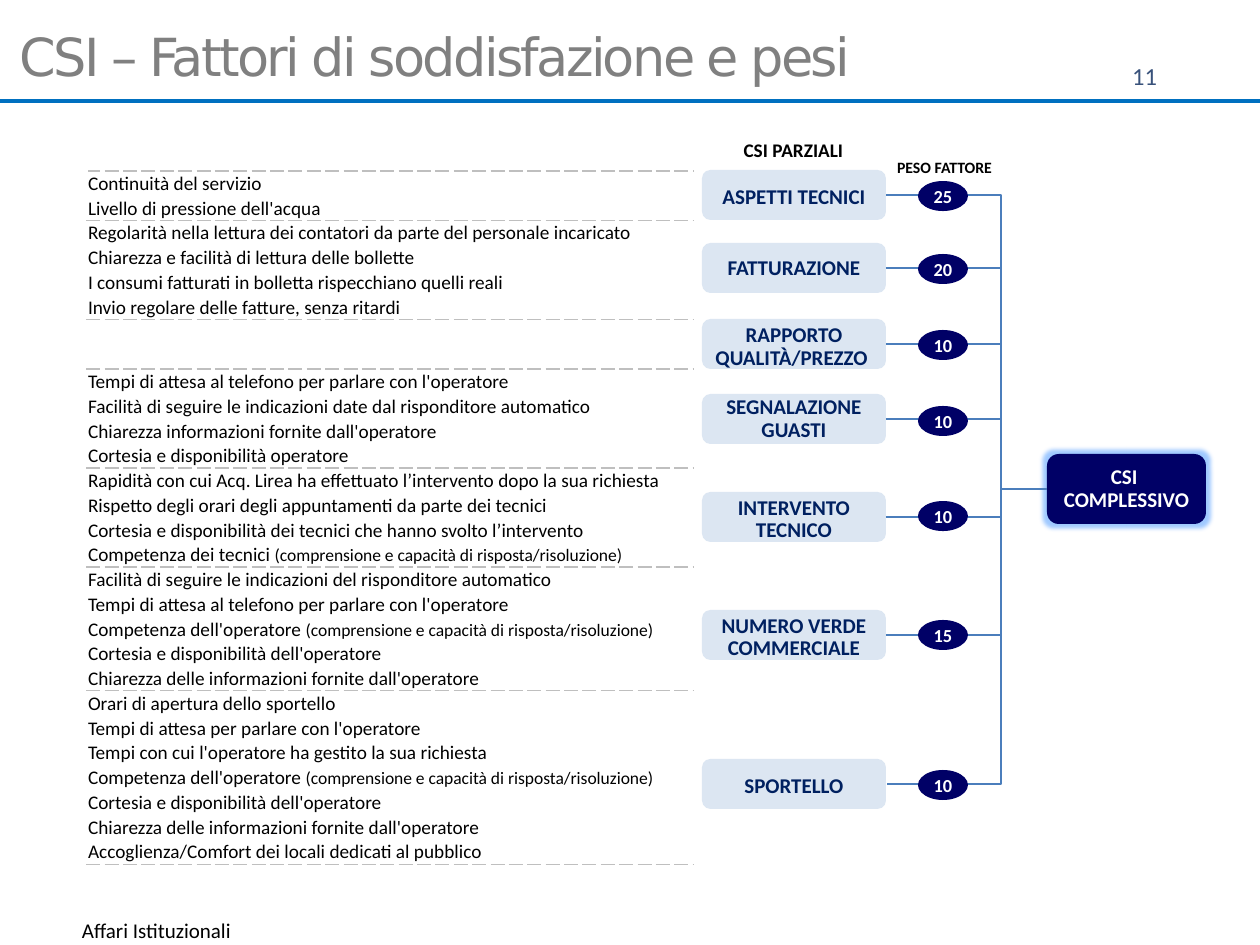
"""Build the slide of satisfaction factors, their weights and the overall CSI."""
from dataclasses import dataclass
from typing import Any, NamedTuple

from lxml.etree import SubElement
from pptx import Presentation
from pptx.dml.color import RGBColor
from pptx.enum.dml import MSO_LINE
from pptx.enum.shapes import MSO_CONNECTOR, MSO_SHAPE
from pptx.enum.text import MSO_ANCHOR, PP_ALIGN
from pptx.oxml.ns import qn
from pptx.util import Emu, Pt


@dataclass(frozen=True)
class Theme:
    font: str = "Calibri"
    title_font: str = "DejaVu Sans"
    black: str = "000000"
    white: str = "FFFFFF"
    title: str = "808080"
    number: str = "39527B"
    rule: str = "0070C0"
    dash: str = "BFBFBF"
    navy: str = "000066"
    pale: str = "DCE6F2"
    factor: str = "002060"
    link: str = "4B7EBC"
    glow: str = "60A5FF"
    title_pt: float = 30
    number_pt: float = 14
    box_pt: float = 12
    row_pt: float = 11
    weight_pt: float = 10.5
    note_pt: float = 10
    label_pt: float = 9
    leading_pt: float = 13


class Box(NamedTuple):
    x: int
    y: int
    w: int
    h: int


class Style(NamedTuple):
    size: float
    color: str
    bold: bool = False
    font: str = "Calibri"


class Factor(NamedTuple):
    name: str
    weight: str
    top: int
    oval_top: int
    inset: int = 5


T = Theme()
MARGINS = (13, 6, 13, 6)
BUS_X = 1002
NOTE = "(comprensione e capacità di risposta/risoluzione)"
FACTORS = [
    Factor("ASPETTI TECNICI", "25", 170, 181),
    Factor("FATTURAZIONE", "20", 243, 254, 0),
    Factor("RAPPORTO QUALITÀ/PREZZO ", "10", 319, 330),
    Factor("SEGNALAZIONE GUASTI", "10", 394, 406, 0),
    Factor("INTERVENTO TECNICO", "10", 492, 501),
    Factor("NUMERO VERDE COMMERCIALE", "15", 610, 620),
    Factor("SPORTELLO", "10", 759, 770),
]
GROUPS = [
    ["Continuità del servizio", "Livello di pressione dell'acqua"],
    ["Regolarità nella lettura dei contatori da parte del personale incaricato",
     "Chiarezza e facilità di lettura delle bollette",
     "I consumi fatturati in bolletta rispecchiano quelli reali",
     "Invio regolare delle fatture, senza ritardi"],
    ["", ""],
    ["Tempi di attesa al telefono per parlare con l'operatore",
     "Facilità di seguire le indicazioni date dal risponditore automatico",
     "Chiarezza informazioni fornite dall'operatore",
     "Cortesia e disponibilità operatore"],
    ["Rapidità con cui Acq. Lirea ha effettuato l’intervento dopo la sua richiesta",
     "Rispetto degli orari degli appuntamenti da parte dei tecnici",
     "Cortesia e disponibilità dei tecnici che hanno svolto l’intervento",
     f"Competenza dei tecnici {NOTE}"],
    ["Facilità di seguire le indicazioni del risponditore automatico",
     "Tempi di attesa al telefono per parlare con l'operatore",
     f"Competenza dell'operatore {NOTE}",
     "Cortesia e disponibilità dell'operatore",
     "Chiarezza delle informazioni fornite dall'operatore"],
    ["Orari di apertura dello sportello",
     "Tempi di attesa per parlare con l'operatore",
     "Tempi con cui l'operatore ha gestito la sua richiesta",
     f"Competenza dell'operatore {NOTE}",
     "Cortesia e disponibilità dell'operatore",
     "Chiarezza delle informazioni fornite dall'operatore",
     "Accoglienza/Comfort dei locali dedicati al pubblico"],
]


def px(n: int) -> Emu:
    """Turn pixels into EMU."""
    return Emu(round(n * 914400 / 126))


def place(box: Box) -> list[Emu]:
    """Give the four EMU lengths of a box."""
    return [px(n) for n in box]


def add_run(p: Any, text: str, style: Style) -> Any:
    """Add one formatted run."""
    r = p.add_run()
    r.text = text
    r.font.size, r.font.bold, r.font.name = Pt(style.size), style.bold, style.font
    r.font.color.rgb = RGBColor.from_string(style.color)
    return r


def set_frame(tf: Any, insets: tuple[int, int, int, int], anchor: MSO_ANCHOR) -> None:
    """Set wrapping, margins and anchor of a text frame."""
    tf.word_wrap = True
    tf.vertical_anchor = anchor
    tf.margin_left, tf.margin_top, tf.margin_right, tf.margin_bottom = map(px, insets)


def add_label(s: Any, box: Box, text: str, style: Style, align: PP_ALIGN,
              insets: tuple[int, int, int, int] = MARGINS,
              anchor: MSO_ANCHOR = MSO_ANCHOR.TOP) -> None:
    """Add a one-line text box."""
    tf = s.shapes.add_textbox(*place(box)).text_frame
    set_frame(tf, insets, anchor)
    tf.paragraphs[0].alignment = align
    add_run(tf.paragraphs[0], text, style)


def add_node(s: Any, kind: MSO_SHAPE, box: Box, fill: str, lines: list[str],
             style: Style, insets: tuple[int, int, int, int]) -> Any:
    """Add a filled shape with centred text."""
    sp = s.shapes.add_shape(kind, *place(box))
    sp.shadow.inherit = False
    sp.fill.solid()
    sp.fill.fore_color.rgb = RGBColor.from_string(fill)
    sp.line.fill.background()
    tf = sp.text_frame
    set_frame(tf, insets, MSO_ANCHOR.MIDDLE)
    for i, line in enumerate(lines):
        p = tf.add_paragraph() if i else tf.paragraphs[0]
        p.alignment, p.line_spacing = PP_ALIGN.CENTER, Pt(T.leading_pt)
        add_run(p, line, style)
    return sp


def add_link(s: Any, start: tuple[int, int], end: tuple[int, int], color: str = T.link,
             width: float = 0.75, kind: MSO_CONNECTOR = MSO_CONNECTOR.STRAIGHT) -> Any:
    """Add a connector without shadow."""
    c = s.shapes.add_connector(kind, *(px(n) for n in start + end))
    c.line.color.rgb = RGBColor.from_string(color)
    c.line.width = Pt(width)
    SubElement(c._element.spPr, qn("a:effectLst"))
    return c


def add_dash(cell: Any, side: str) -> None:
    """Draw a dashed border on one side of a cell."""
    ln = SubElement(cell._tc.get_or_add_tcPr(), qn(f"a:{side}"), w=str(Pt(0.75)))
    SubElement(SubElement(ln, qn("a:solidFill")), qn("a:srgbClr"), val=T.dash)
    SubElement(ln, qn("a:prstDash"), val="dash")


def fill_cell(cell: Any, text: str) -> None:
    """Write a row's wording, with its note in smaller type."""
    cell.margin_left = cell.margin_top = cell.margin_right = px(1)
    cell.margin_bottom = 0
    cell.vertical_anchor = MSO_ANCHOR.MIDDLE
    cell.fill.background()
    p = cell.text_frame.paragraphs[0]
    if not text:
        p._p.get_or_add_endParaRPr().set("sz", str(round(T.row_pt * 100)))
        return
    main, note, _ = text.partition(NOTE)
    add_run(p, main, Style(T.row_pt, T.black))
    if note:
        add_run(p, note, Style(T.note_pt, T.black))


def add_items(s: Any, box: Box) -> None:
    """Add the table of items, ruled off by group."""
    count = sum(map(len, GROUPS))
    table = s.shapes.add_table(count, 1, *place(box)).table
    table.first_row = table.horz_banding = False
    rows = iter(table.rows)
    for group in GROUPS:
        for i, text in enumerate(group):
            row = next(rows)
            row.height = px(box.h) // count
            cell = row.cells[0]
            if i == 0:
                add_dash(cell, "lnT")
            if i == len(group) - 1:
                add_dash(cell, "lnB")
            fill_cell(cell, text)


def add_factor(s: Any, factor: Factor, joined: bool) -> None:
    """Add a factor box, its weight and, if joined, its line to the bus."""
    box = Box(702, factor.top, 184, 50)
    sp = add_node(s, MSO_SHAPE.ROUNDED_RECTANGLE, box, T.pale, [factor.name],
                  Style(T.box_pt, T.factor, True), (3, factor.inset, 3, 0))
    if joined:
        y = factor.top + 25
        add_link(s, (886, y), (BUS_X, y)).begin_connect(sp, 3)
    add_node(s, MSO_SHAPE.OVAL, Box(918, factor.oval_top, 50, 30), T.navy,
             [factor.weight], Style(T.weight_pt, T.white, True), (0, 0, 0, 0))


def add_total(s: Any) -> None:
    """Add the glowing overall box and its line from the bus."""
    sp = add_node(s, MSO_SHAPE.ROUNDED_RECTANGLE, Box(1047, 454, 159, 70), T.navy,
                  ["CSI ", "COMPLESSIVO"], Style(T.box_pt, T.white, True), MARGINS)
    effects = sp._element.spPr.find(qn("a:effectLst"))
    glow = SubElement(effects, qn("a:glow"), rad=str(Pt(5)))
    color = SubElement(glow, qn("a:srgbClr"), val=T.glow)
    SubElement(color, qn("a:alpha"), val="60000")
    add_link(s, (BUS_X, 489), (1047, 489)).end_connect(sp, 1)


def main() -> None:
    """Build and save the slide."""
    prs = Presentation()
    prs.slide_width, prs.slide_height = px(1260), px(945)
    s = prs.slides.add_slide(prs.slide_layouts[5])
    title = s.shapes.title
    title.left, title.top, title.width, title.height = place(Box(0, 16, 1225, 80))
    set_frame(title.text_frame, (20, 6, 13, 6), MSO_ANCHOR.MIDDLE)
    p = title.text_frame.paragraphs[0]
    p.alignment = PP_ALIGN.LEFT
    r = add_run(p, "CSI – Fattori di soddisfazione e pesi",
                Style(T.title_pt, T.title, font=T.title_font))
    r.font._element.set("spc", "-150")
    add_link(s, (0, 101), (1260, 101), T.rule, 2)
    add_label(s, Box(876, 55, 294, 50), "11", Style(T.number_pt, T.number), PP_ALIGN.RIGHT)
    add_label(s, Box(69, 911, 397, 38), "Affari Istituzionali",
              Style(T.box_pt, T.black), PP_ALIGN.LEFT, anchor=MSO_ANCHOR.MIDDLE)
    add_items(s, Box(87, 171, 605, 694))
    bus = add_link(s, (886, 195), (887, 784), kind=MSO_CONNECTOR.ELBOW)
    guides = bus._element.spPr.find(qn("a:prstGeom")).get_or_add_avLst()
    SubElement(guides, qn("a:gd"), name="adj1", fmla=f"val {(BUS_X - 886) * 100000}")
    for factor in FACTORS:
        add_factor(s, factor, factor not in (FACTORS[0], FACTORS[-1]))
    add_total(s)
    add_label(s, Box(736, 132, 115, 37), "CSI PARZIALI",
              Style(T.row_pt, T.black, True), PP_ALIGN.CENTER, (0, 6, 0, 6))
    add_label(s, Box(887, 152, 115, 32), "PESO FATTORE",
              Style(T.label_pt, T.black, True), PP_ALIGN.CENTER, (0, 6, 0, 6))
    prs.save("out.pptx")


if __name__ == "__main__":
    main()
